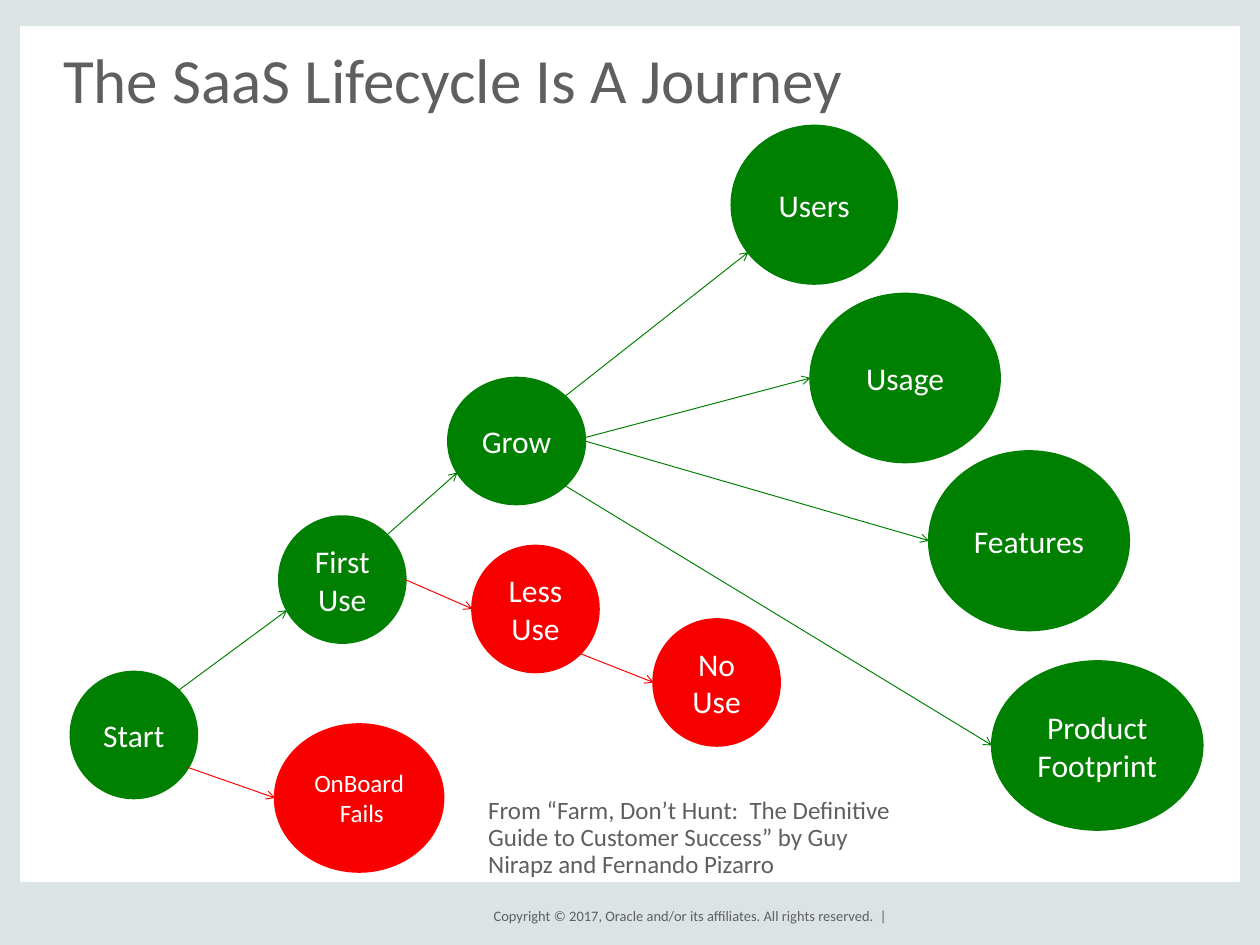
import math

import lxml.etree
import pptx
import pptx.dml.color
import pptx.enum.shapes
import pptx.enum.text
import pptx.oxml.ns
import pptx.util

SHAPE = pptx.enum.shapes.MSO_SHAPE
ALIGN = pptx.enum.text.PP_ALIGN
ANCHOR = pptx.enum.text.MSO_ANCHOR
FIT = pptx.enum.text.MSO_AUTO_SIZE
UNIT = 0.111
GREEN, RED, PALE, GREY, WHITE = "008000", "F80000", "DCE3E4", "5F5F5F", "FFFFFF"


def color(code):
    return pptx.dml.color.RGBColor.from_string(code)


def grid(*cells):
    return [pptx.util.Inches(cell * UNIT) for cell in cells]


def assign(item, values):
    for name, value in values.items():
        setattr(item, name, value)


def rim(node, angle):
    left, top, width, height = node
    turn = math.radians(angle)
    return (left + width / 2 * (1 + math.cos(turn)),
            top + height / 2 * (1 + math.sin(turn)))


class Page:
    font = "Calibri"

    def __init__(self, deck):
        self.slide = deck.slides.add_slide(deck.slide_layouts[5])
        self.shapes = self.slide.shapes

    def label(self, shape, text, size, tint, frame, para):
        body = shape.text_frame
        body.text = text
        assign(body, {"word_wrap": True, "auto_size": FIT.NONE,
                      "margin_left": 0, "margin_right": 0,
                      "margin_top": 0, "margin_bottom": 0, **frame})
        for line in body.paragraphs:
            assign(line, para)
            assign(line.font, {"name": self.font, "size": pptx.util.Pt(size)})
            line.font.color.rgb = color(tint)

    def title(self, text, box):
        shape = self.shapes.title
        assign(shape, dict(zip(("left", "top", "width", "height"), grid(*box))))
        self.label(shape, text, 48, GREY, {"vertical_anchor": ANCHOR.BOTTOM},
                   {"alignment": ALIGN.LEFT, "line_spacing": 0.8})

    def note(self, text, box, size, frame, para):
        shape = self.shapes.add_textbox(*grid(*box))
        self.label(shape, text, size, GREY, frame, para)

    def block(self, kind, box, fill):
        shape = self.shapes.add_shape(kind, *grid(*box))
        shape.shadow.inherit = False
        shape.fill.solid()
        shape.fill.fore_color.rgb = color(fill)
        shape.line.fill.background()
        return shape

    def node(self, text, box, fill, size=24, edge=None):
        shape = self.block(SHAPE.FLOWCHART_CONNECTOR, box, fill)
        shape.line.color.rgb = color(edge or fill)
        shape.line.width = pptx.util.Pt(2)
        side, end = pptx.util.Inches(0.13), pptx.util.Inches(0.07)
        self.label(shape, text, size, WHITE,
                   {"vertical_anchor": ANCHOR.MIDDLE, "margin_left": side,
                    "margin_right": side, "margin_top": end, "margin_bottom": end},
                   {"alignment": ALIGN.CENTER})

    def arrow(self, start, stop, tint):
        shape = self.shapes.add_connector(
            pptx.enum.shapes.MSO_CONNECTOR.STRAIGHT, *grid(*start, *stop))
        shape.line.color.rgb = color(tint)
        shape.line.width = pptx.util.Pt(0.75)
        tag = pptx.oxml.ns.qn
        props = shape._element.spPr
        tip = lxml.etree.SubElement(props.get_or_add_ln(), tag("a:tailEnd"))
        tip.set("type", "arrow")
        lxml.etree.SubElement(props, tag("a:effectLst"))


def main():
    deck = pptx.Presentation()
    deck.slide_width, deck.slide_height = grid(120, 90)
    page = Page(deck)

    for bar in ((0, 0, 1.9, 90), (118.1, 0, 1.9, 90),
                (0, 84, 120, 6), (0, 0, 120, 2.5)):
        page.block(SHAPE.RECTANGLE, bar, PALE)
    page.note("Copyright © 2017, Oracle and/or its affiliates. All rights reserved.  |",
              (53, 86, 31.5, 2.4), 11,
              {"word_wrap": False, "vertical_anchor": ANCHOR.MIDDLE},
              {"alignment": ALIGN.RIGHT})
    page.title("The SaaS Lifecycle Is A Journey", (6, 3.6, 108, 7.4))

    nodes = {
        "Start": ((6.75, 64, 12, 12), GREEN),
        "OnBoard\n Fails": ((26.2, 69, 16, 14), RED, 19, "FF0000"),
        "First Use": ((26.6, 49.2, 12, 12), GREEN),
        "Less Use": ((45, 52, 12, 12), RED),
        "No Use": ((62.25, 59, 12, 12), RED),
        "Grow": ((42.7, 36, 13, 12), GREEN),
        "Users": ((69.7, 12, 15.7, 15), GREEN),
        "Usage": ((77.2, 28, 18, 16), GREEN),
        "Features": ((88.5, 43, 19, 17), GREEN),
        "Product Footprint": ((94.5, 63, 20, 16), GREEN),
    }
    for text, style in nodes.items():
        page.node(text, *style)

    for start, leave, stop, enter in (
        ("Start", -45, "First Use", 151),
        ("Start", 31, "OnBoard\n Fails", 180),
        ("First Use", 0, "Less Use", 180),
        ("First Use", -45, "Grow", 150),
        ("Less Use", 45, "No Use", 180),
        ("Grow", -45, "Users", 143),
        ("Grow", -3, "Usage", 180),
        ("Grow", 0, "Features", 180),
        ("Grow", 45, "Product Footprint", 180),
    ):
        goal, tint = nodes[stop][:2]
        page.arrow(rim(nodes[start][0], leave), rim(goal, enter), tint)

    page.note("From “Farm, Don’t Hunt:  The Definitive Guide to Customer Success” "
              "by Guy Nirapz and Fernando Pizarro",
              (46.5, 76, 40.5, 10), 19, {"vertical_anchor": ANCHOR.TOP},
              {"alignment": ALIGN.LEFT, "line_spacing": 0.9})
    deck.save("out.pptx")


if __name__ == "__main__":
    main()
